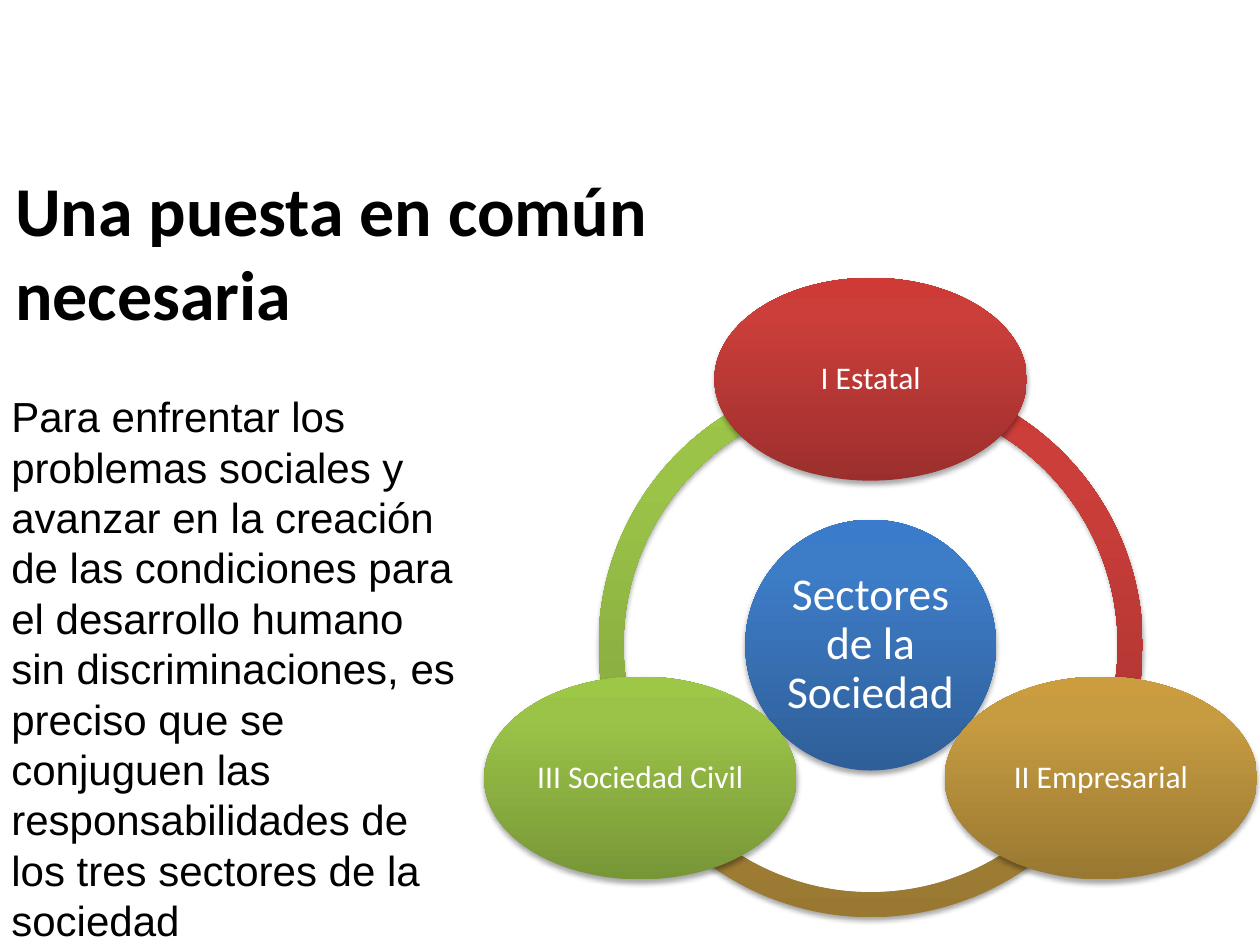
"""Build a slide on the three sectors of society, drawn as a ring."""
import math
import pptx
import pptx.util
import pptx.dml.color
import pptx.enum.shapes
import pptx.enum.text
import pptx.oxml
import pptx.oxml.ns

Inches, Pt = pptx.util.Inches, pptx.util.Pt
RGB = pptx.dml.color.RGBColor
SHAPE = pptx.enum.shapes.MSO_SHAPE
ALIGN = pptx.enum.text.PP_ALIGN
ANCHOR = pptx.enum.text.MSO_ANCHOR

BLACK, WHITE = RGB(0, 0, 0), RGB(255, 255, 255)
RED = RGB(0x9C, 0x2F, 0x2D), RGB(0xCB, 0x3E, 0x3A), RGB(0xCE, 0x3B, 0x37)
GOLD = RGB(0x99, 0x78, 0x32), RGB(0xC7, 0x9C, 0x41), RGB(0xCB, 0x9D, 0x3F)
GREEN = RGB(0x77, 0x97, 0x37), RGB(0x9B, 0xC3, 0x48), RGB(0x9D, 0xC7, 0x46)
BLUE = RGB(0x2F, 0x5F, 0x99), RGB(0x3D, 0x7C, 0xC7), RGB(0x3A, 0x7C, 0xCB)


def write(shape, text, size, font="Calibri", color=WHITE, bold=False,
          align=ALIGN.CENTER, anchor=ANCHOR.MIDDLE, inset=0.03, space=0.9):
    frame = shape.text_frame
    frame.text = text
    frame.word_wrap = True
    frame.auto_size = pptx.enum.text.MSO_AUTO_SIZE.NONE
    frame.vertical_anchor = anchor
    frame.margin_left = frame.margin_right = Inches(inset)
    frame.margin_top = frame.margin_bottom = Inches(min(inset, 0.05))
    para = frame.paragraphs[0]
    para.alignment = align
    para.line_spacing = space
    para.space_before = Pt(0)
    run = para.runs[0].font
    run.name, run.size, run.bold = font, Pt(size), bold
    run.color.rgb = color


def draw(kind, mid_x, mid_y, wide, high, tones):
    shape = slide.shapes.add_shape(
        kind, Inches(mid_x - wide / 2), Inches(mid_y - high / 2),
        Inches(wide), Inches(high))
    shape.line.fill.background()
    stops = "".join(
        f'<a:gs pos="{pos}"><a:srgbClr val="{tone}"/></a:gs>'
        for pos, tone in zip((0, 80000, 100000), tones))
    space = pptx.oxml.ns.nsdecls("a")
    grad = pptx.oxml.parse_xml(
        f'<a:gradFill {space} rotWithShape="1"><a:gsLst>{stops}</a:gsLst>'
        '<a:lin ang="16200000" scaled="0"/></a:gradFill>')
    shade = pptx.oxml.parse_xml(
        f'<a:effectLst {space}><a:outerShdw blurRad="{Pt(3.1)}" '
        f'dist="{Pt(1.8)}" dir="5400000" rotWithShape="0">'
        '<a:srgbClr val="000000"><a:alpha val="35000"/></a:srgbClr>'
        '</a:outerShdw></a:effectLst>')
    props = shape._element.spPr
    props.find(pptx.oxml.ns.qn("a:ln")).addprevious(grad)
    props.append(shade)
    return shape


deck = pptx.Presentation()
deck.slide_width, deck.slide_height = Inches(10), Inches(7.5)
slide = deck.slides.add_slide(deck.slide_layouts[1])

title = slide.shapes.title
title.left, title.top = Inches(0.02), Inches(1.36)
title.width, title.height = Inches(6.88), Inches(1.25)
write(title, "Una puesta en común necesaria", 40, color=BLACK, bold=True,
      align=ALIGN.LEFT, inset=0.1, space=1)

body = slide.placeholders[1]
body.left, body.top = Inches(-0.01), Inches(3.05)
body.width, body.height = Inches(3.83), Inches(4.55)
write(body, "Para enfrentar los problemas sociales y avanzar en la creación "
      "de las condiciones para el desarrollo humano sin discriminaciones, "
      "es preciso que se conjuguen las responsabilidades de los tres "
      "sectores de la sociedad", 24, font="Arial", color=BLACK,
      align=ALIGN.LEFT, anchor=ANCHOR.TOP, inset=0.1, space=1)
props = body.text_frame.paragraphs[0]._p.get_or_add_pPr()
props.set("marL", "0")
props.set("indent", "0")
props.append(pptx.oxml.parse_xml(
    f'<a:buNone {pptx.oxml.ns.nsdecls("a")}/>'))

MID_X, MID_Y, ORBIT = 6.91, 5.12, 2.11
for start, end, tones in ((150, 270, GREEN), (30, 150, GOLD), (270, 30, RED)):
    arc = draw(SHAPE.BLOCK_ARC, MID_X, MID_Y, 4.32, 4.32, tones)
    arc.adjustments[0] = start * 0.6
    arc.adjustments[1] = end * 0.6
    arc.adjustments[2] = 0.046

core = draw(SHAPE.OVAL, MID_X, MID_Y, 1.99, 1.99, BLUE)
write(core, "Sectores de la Sociedad", 26, inset=0.04)

sectors = (("I Estatal", RED), ("II Empresarial", GOLD),
           ("III Sociedad Civil", GREEN))
for step, (name, tones) in enumerate(sectors):
    turn = math.radians(120 * step - 90)
    node = draw(SHAPE.OVAL, MID_X + ORBIT * math.cos(turn),
                MID_Y + ORBIT * math.sin(turn), 2.48, 1.61, tones)
    write(node, name, 18)

deck.save("out.pptx")
